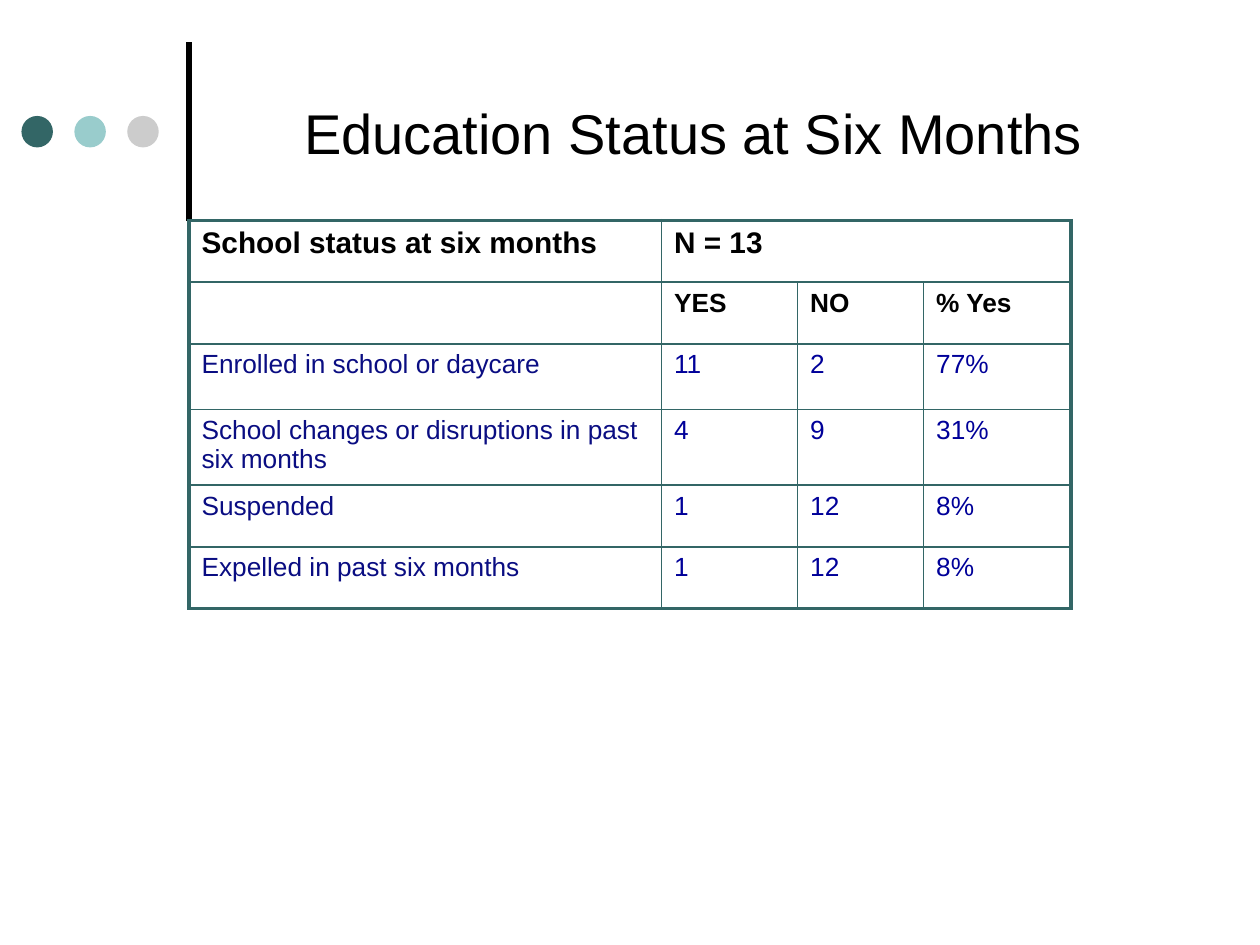
from typing import NamedTuple

from lxml.etree import SubElement
from pptx import Presentation
from pptx.dml.color import RGBColor
from pptx.enum.shapes import MSO_CONNECTOR as Connector, MSO_SHAPE as Shape
from pptx.enum.text import MSO_ANCHOR as Anchor, PP_ALIGN as Align
from pptx.oxml import parse_xml
from pptx.oxml.ns import nsdecls, qn
from pptx.util import Inches, Pt

COLORS = {
    "black": "000000",
    "teal": "336666",
    "aqua": "99CCCC",
    "gray": "CCCCCC",
    "label": "0A0D82",
    "value": "000099",
}
OUTER, INNER = 2.25, 1
COL_WIDTHS = [3.75, 1.08, 1, 1.17]
ROW_HEIGHTS = [0.49, 0.49, 0.52, 0.56, 0.49, 0.49]


class Dot(NamedTuple):
    left: float
    color: str


class Row(NamedTuple):
    texts: tuple[str, ...]
    size: float = 15
    bold: bool = False
    label_color: str = "label"
    value_color: str = "value"


HEADER = {"bold": True, "label_color": "black", "value_color": "black"}
DOTS = [Dot(0.17 + 0.42 * i, c) for i, c in enumerate(("teal", "aqua", "gray"))]
ROWS = [
    Row(("School status at six months", "N = 13", "", ""), size=17, **HEADER),
    Row(("", "YES", "NO", "% Yes"), **HEADER),
    Row(("Enrolled in school or daycare", "11", "2", "77%")),
    Row(("School changes or disruptions in past six months", "4", "9", "31%")),
    Row(("Suspended", "1", "12", "8%")),
    Row(("Expelled in past six months", "1", "12", "8%")),
]


def rgb(name: str) -> RGBColor:
    return RGBColor.from_string(COLORS[name])


def set_font(font, color: str, **values) -> None:
    for name, value in {"name": "Arial", **values}.items():
        setattr(font, name, value)
    font.color.rgb = rgb(color)


def add_dot(slide, dot: Dot) -> None:
    sp = slide.shapes.add_shape(
        Shape.OVAL, Inches(dot.left), Inches(0.92), Inches(0.25), Inches(0.25))
    sp.shadow.inherit = False
    sp.fill.solid()
    sp.fill.fore_color.rgb = rgb(dot.color)
    sp.line.fill.background()


def add_rule(slide) -> None:
    line = slide.shapes.add_connector(
        Connector.STRAIGHT, Inches(1.5), Inches(1.75), Inches(1.5), Inches(0.33))
    line.line.color.rgb = rgb("black")
    line.line.width = Pt(3)
    SubElement(line._element.spPr, qn("a:effectLst"))


def add_title(slide, text: str) -> None:
    box = slide.shapes.add_textbox(
        Inches(1.67), Inches(0.21), Inches(7.67), Inches(1.67))
    tf = box.text_frame
    tf.word_wrap = True
    tf.vertical_anchor = Anchor.MIDDLE
    p = tf.paragraphs[0]
    p.text = text
    p.alignment = Align.CENTER
    set_font(p.font, "black", size=Pt(32))


def set_borders(cell, widths: dict[str, float]) -> None:
    """Put the border lines ahead of the fill, as the schema orders them."""
    tc_pr = cell._tc.get_or_add_tcPr()
    for i, (side, width) in enumerate(widths.items()):
        tc_pr.insert(i, parse_xml(
            f'<a:ln{side} {nsdecls("a")} w="{Pt(width)}"><a:solidFill>'
            f'<a:srgbClr val="{COLORS["teal"]}"/></a:solidFill></a:ln{side}>'))


def add_status_table(slide, rows: list[Row]) -> None:
    last_row, last_col = len(rows) - 1, len(COL_WIDTHS) - 1
    table = slide.shapes.add_table(
        len(rows), len(COL_WIDTHS), Inches(1.5), Inches(1.75),
        Inches(sum(COL_WIDTHS)), Inches(sum(ROW_HEIGHTS))).table
    table.first_row = table.horz_banding = False
    for column, width in zip(table.columns, COL_WIDTHS):
        column.width = Inches(width)
    for line, height in zip(table.rows, ROW_HEIGHTS):
        line.height = Inches(height)
    table.cell(0, 1).merge(table.cell(0, last_col))

    for r, row in enumerate(rows):
        for c, text in enumerate(row.texts):
            cell = table.cell(r, c)
            cell.fill.background()
            edges = {"L": c == 0, "R": c == last_col or (r == 0 and c > 0),
                     "T": r == 0, "B": r == last_row}
            set_borders(cell, {s: OUTER if e else INNER for s, e in edges.items()})
            p = cell.text_frame.paragraphs[0]
            p.text = text
            color = row.value_color if c else row.label_color
            set_font(p.font, color, size=Pt(row.size), bold=row.bold)


def main() -> None:
    prs = Presentation()
    prs.slide_width, prs.slide_height = Inches(10), Inches(7.5)
    s = prs.slides.add_slide(prs.slide_layouts[6])
    add_rule(s)
    for dot in DOTS:
        add_dot(s, dot)
    add_title(s, "Education Status at Six Months")
    add_status_table(s, ROWS)
    prs.save("out.pptx")


if __name__ == "__main__":
    main()
